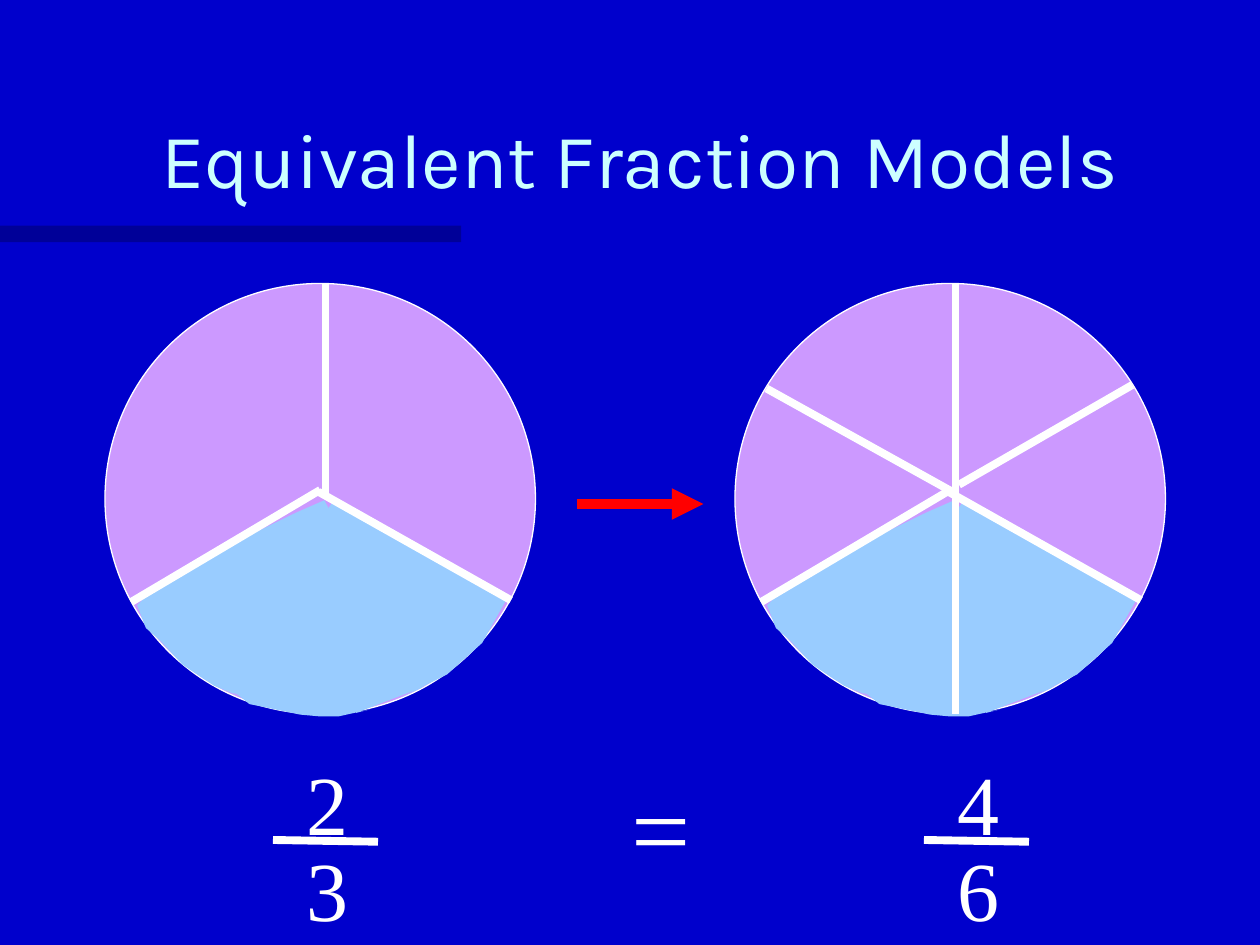
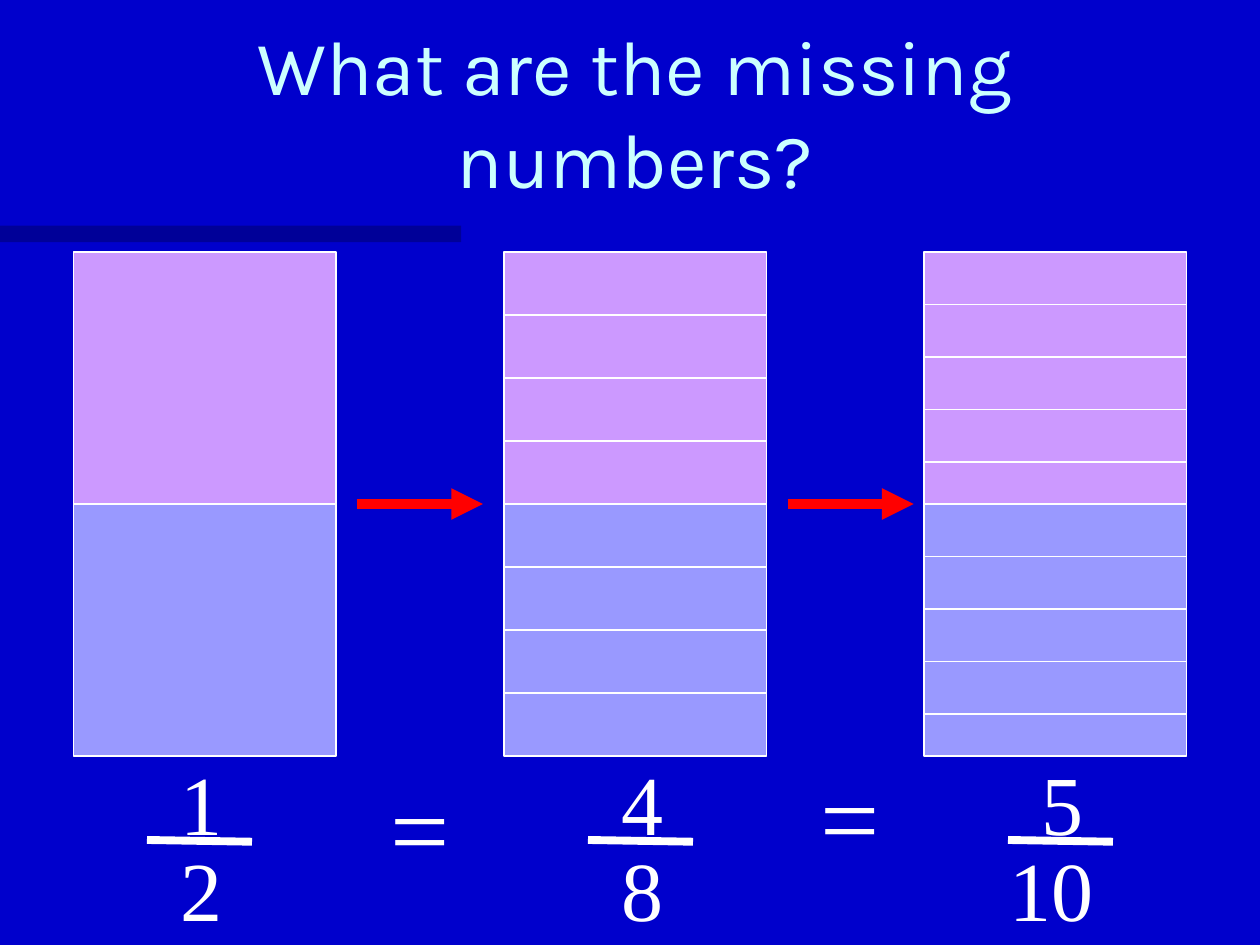
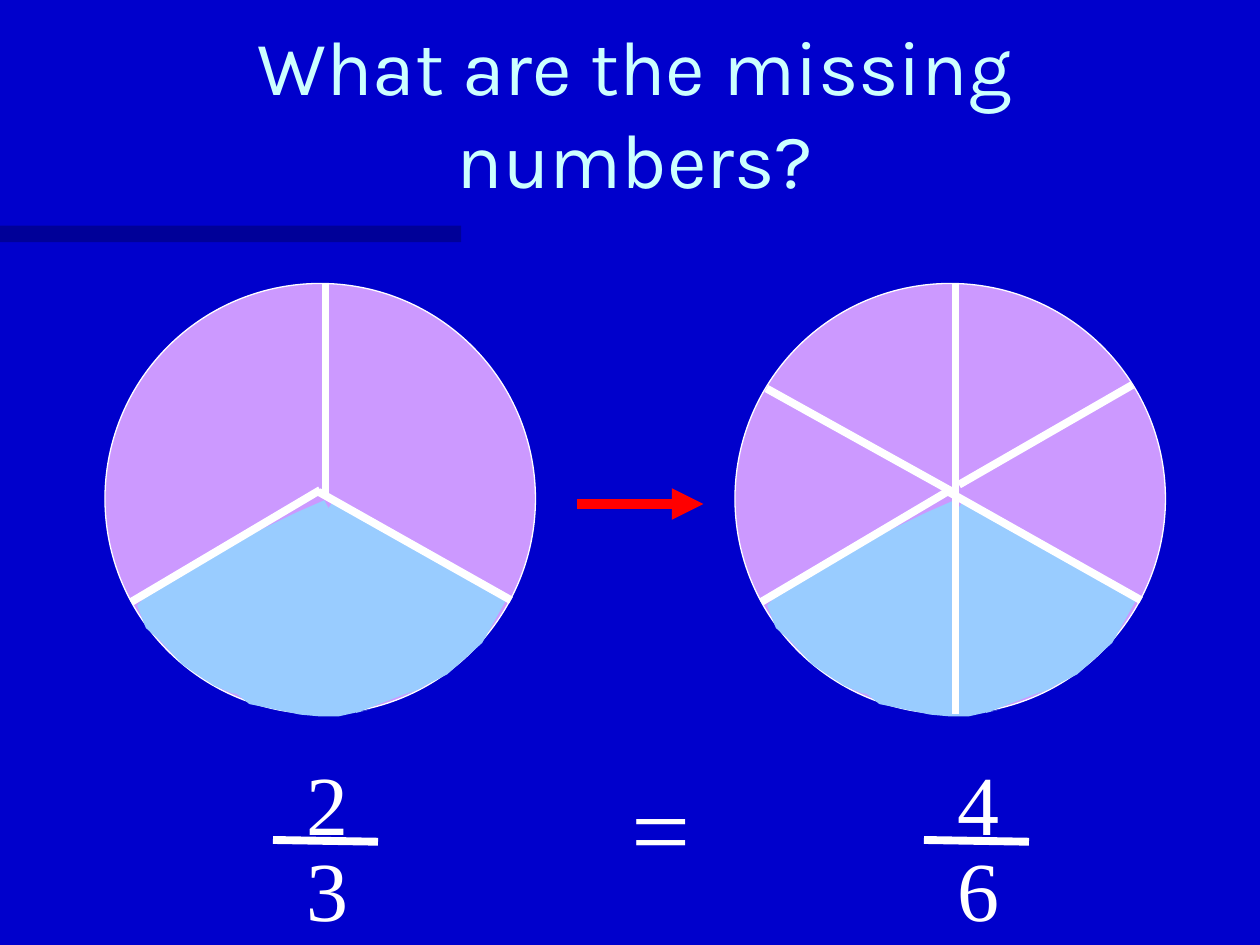
from math import cos, radians, sin

from lxml import etree
from pptx import Presentation
from pptx.dml.color import RGBColor
from pptx.enum.shapes import MSO_CONNECTOR, MSO_SHAPE
from pptx.enum.text import MSO_ANCHOR, MSO_AUTO_SIZE, PP_ALIGN
from pptx.oxml.ns import qn
from pptx.util import Pt

STRAIGHT = MSO_CONNECTOR.STRAIGHT
RECTANGLE, OVAL = MSO_SHAPE.RECTANGLE, MSO_SHAPE.OVAL
BOTTOM, CENTER = MSO_ANCHOR.BOTTOM, PP_ALIGN.CENTER
NO_FIT, FIT_SHAPE = MSO_AUTO_SIZE.NONE, MSO_AUTO_SIZE.SHAPE_TO_FIT_TEXT

BLUE = RGBColor(0x00, 0x00, 0xCC)
NAVY = RGBColor(0x00, 0x00, 0x66)
ICE = RGBColor(0xCC, 0xFF, 0xFF)
WHITE = RGBColor(0xFF, 0xFF, 0xFF)
RED = RGBColor(0xFF, 0x00, 0x00)
LILAC = RGBColor(0xCC, 0x99, 0xFF)
PERIWINKLE = RGBColor(0x99, 0x99, 0xFF)
SKY = RGBColor(0x99, 0xCC, 0xFF)
TITLE_FONT, NUMBER_FONT = "Karla", "Times New Roman"

# Titles: text, left, width
TITLES = [
    ("Equivalent Fraction Models", 60, 612),
    ("What are the missing numbers?", 42, 642),
    ("What are the missing numbers?", 42, 642),
]

# Circle models: offsets are measured from the top left of the circle
CIRCLE_TOP, CIRCLE_SIZE = 162, 246
THIRDS = [(126, 0, 126, 120), (122, 119, 232, 181), (123, 118, 15, 182)]
SIXTHS = THIRDS + [(18, 60, 126, 120), (128, 115, 227, 58), (126, 120, 126, 246)]
CIRCLES = [(60, THIRDS), (420, SIXTHS)]

# Shaded sectors: rotation, pivot, outline
SECTORS = [
    (29.4, (148.8, 206.3), [
        (131, 124), (121, 138), (100, 171), (88, 197), (75, 220), (72, 231),
        (83, 240), (93, 242), (112, 246), (123, 247), (134, 247), (152, 243),
        (144, 245), (183, 230), (170, 236), (196, 223), (216, 205), (230, 180)]),
    (61.9, (98.4, 203.4), [
        (127, 123), (111, 130), (76, 147), (52, 162), (29, 174), (20, 183),
        (25, 196), (33, 203), (46, 217), (55, 223), (64, 229), (81, 236),
        (74, 233), (115, 241), (101, 240), (129, 243), (155, 238), (181, 224)]),
]

# Bar models: left, height of one part
BARS = [(42, 144), (288, 36), (528, 30)]
BAR_TOP, BAR_WIDTH, BAR_HALF = 144, 150, 144

# Equations: arrow lefts, fractions (rule left, numerator, denominator), equal signs
CIRCLE_EQUATION = ([330], [(156, "2", "3"), (528, "4", "6")], [(354, 432)])
BAR_EQUATION = ([204, 450],
                [(84, "1", "2"), (336, "4", "8"), (576, "5", "10")],
                [(216, 432), (462, 426)])
EQUATIONS = [CIRCLE_EQUATION, BAR_EQUATION, CIRCLE_EQUATION]


def add_line(slide, x1, y1, x2, y2, color=WHITE, width=4.5, arrow=False):
    line = slide.shapes.add_connector(STRAIGHT, Pt(x1), Pt(y1), Pt(x2), Pt(y2))
    line.line.color.rgb = color
    line.line.width = Pt(width)
    if arrow:
        etree.SubElement(line.get_or_add_ln(), qn("a:tailEnd"), type="triangle")
    etree.SubElement(line.element.spPr, qn("a:effectLst"))


def add_symbol(slide, text, left, top, width, height, size):
    symbol = slide.shapes.add_textbox(Pt(left), Pt(top), Pt(width), Pt(height))
    frame = symbol.text_frame
    frame.word_wrap = False
    frame.auto_size = FIT_SHAPE
    frame.text = text
    font = frame.paragraphs[0].runs[0].font
    font.name, font.size, font.color.rgb = NUMBER_FONT, Pt(size), WHITE


prs = Presentation()
prs.slide_width, prs.slide_height = Pt(720), Pt(540)
master = prs.slide_master
master.background.fill.solid()
master.background.fill.fore_color.rgb = BLUE

# Slides with their titles
for text, left, width in TITLES:
    slide = prs.slides.add_slide(prs.slide_layouts[5])
    title = slide.shapes.title
    title.left, title.top, title.width, title.height = Pt(left), Pt(30), Pt(width), Pt(90)
    frame = title.text_frame
    frame.text = text
    frame.auto_size = NO_FIT
    frame.vertical_anchor = BOTTOM
    frame.paragraphs[0].alignment = CENTER
    font = frame.paragraphs[0].runs[0].font
    font.name, font.size, font.color.rgb = TITLE_FONT, Pt(44), ICE

# Half-transparent band, moved to the master behind its placeholders
band = prs.slides[0].shapes.add_shape(RECTANGLE, Pt(0), Pt(129), Pt(263.5), Pt(9.4))
band.shadow.inherit = False
band.fill.solid()
band.fill.fore_color.rgb = NAVY
band.line.fill.background()
band_color = band.element.spPr.find(qn("a:solidFill"))[0]
etree.SubElement(band_color, qn("a:alpha"), val="50000")
master.placeholders[0].element.addprevious(band.element)

# Bars, each with an upper and a lower half cut into equal parts
bar_slide = prs.slides[1]
for left, part in BARS:
    for top, color in ((BAR_TOP, LILAC), (BAR_TOP + BAR_HALF, PERIWINKLE)):
        half = bar_slide.shapes.add_shape(
            RECTANGLE, Pt(left), Pt(top), Pt(BAR_WIDTH), Pt(BAR_HALF))
        half.shadow.inherit = False
        half.fill.solid()
        half.fill.fore_color.rgb = color
        half.line.color.rgb = WHITE
        half.line.width = Pt(0.75)
        for y in range(top + part, top + BAR_HALF, part):
            add_line(bar_slide, left, y, left + BAR_WIDTH, y, width=0.75)

# Arrows, fractions and equal signs
for slide, (arrows, fractions, equal_signs) in zip(prs.slides, EQUATIONS):
    for left in arrows:
        add_line(slide, left, 288, left + 72, 288, RED, 6, arrow=True)
    for left, numerator, denominator in fractions:
        add_line(slide, left, 480, left + 60, 481)
        for number, top in ((numerator, 426), (denominator, 475)):
            extra_digits = len(number) - 1
            add_symbol(slide, number, left + 12 - 18 * extra_digits, top,
                       38 + 25 * extra_digits, 65, 48)
    for left, top in equal_signs:
        add_symbol(slide, "=", left, top, 48, 79, 60)

# Circles with shaded sectors and spokes
for slide in (prs.slides[0], prs.slides[2]):
    for left, spokes in CIRCLES:
        circle = slide.shapes.add_shape(
            OVAL, Pt(left), Pt(CIRCLE_TOP), Pt(CIRCLE_SIZE), Pt(CIRCLE_SIZE))
        circle.shadow.inherit = False
        circle.fill.solid()
        circle.fill.fore_color.rgb = LILAC
        circle.line.color.rgb = WHITE
        circle.line.width = Pt(0.75)
        for angle, (pivot_x, pivot_y), outline in SECTORS:
            # Turn the outline back, so that the shape's rotation restores it
            c, s = cos(radians(angle)), sin(radians(angle))
            points = []
            for x, y in outline:
                dx, dy = x - pivot_x, y - pivot_y
                points.append((Pt(left + pivot_x + dx * c + dy * s),
                               Pt(CIRCLE_TOP + pivot_y - dx * s + dy * c)))
            builder = slide.shapes.build_freeform(*points[0])
            builder.add_line_segments(points[1:], close=True)
            sector = builder.convert_to_shape()
            sector.rotation = angle
            sector.shadow.inherit = False
            sector.fill.solid()
            sector.fill.fore_color.rgb = SKY
            sector.line.fill.background()
        for x1, y1, x2, y2 in spokes:
            add_line(slide, left + x1, CIRCLE_TOP + y1, left + x2, CIRCLE_TOP + y2)

prs.save("out.pptx")
